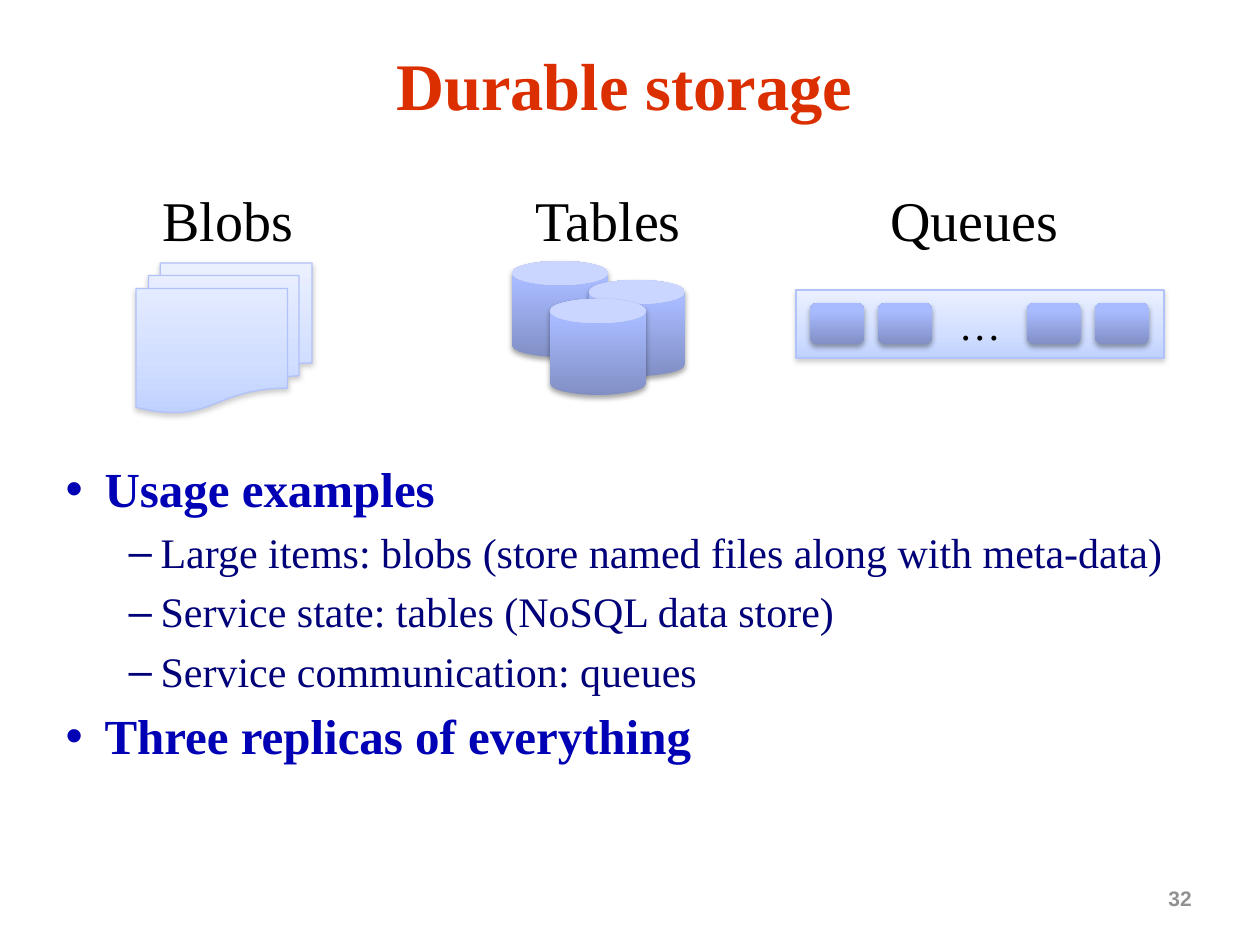
import pptx
import pptx.dml.color
import pptx.enum.shapes
import pptx.enum.text
import pptx.oxml
import pptx.oxml.ns
import pptx.util

RGB = pptx.dml.color.RGBColor
KIND = pptx.enum.shapes.MSO_SHAPE
ALIGN = pptx.enum.text.PP_ALIGN
MID = pptx.enum.text.MSO_ANCHOR.MIDDLE
FIT = pptx.enum.text.MSO_AUTO_SIZE
NS = pptx.oxml.ns.nsdecls("a")

RED = RGB(0xDC, 0x2F, 0x00)
BLUE = RGB(0x00, 0x00, 0xB4)
NAVY = RGB(0x00, 0x00, 0x78)
BLACK = RGB(0x00, 0x00, 0x00)
GRAY = RGB(0x91, 0x91, 0x91)
EDGE = RGB(0xB1, 0xC1, 0xFA)
SHADE = RGB(0x80, 0x80, 0x80)
PALE = [(0, RGB(0xEB, 0xF0, 0xFF)), (65, RGB(0xD1, 0xDE, 0xFF)), (100, RGB(0xBF, 0xD1, 0xFF))]
DEEP = [(0, RGB(0x81, 0x8F, 0xC5)), (80, RGB(0xA8, 0xBB, 0xFF)), (100, RGB(0xAA, 0xBC, 0xFF))]


def px(num):
    return pptx.util.Emu(round(num * 914400 / 126))


def write(para, text, size=32, color=BLACK, bold=False, face="Times New Roman",
          align=None, gap=0, lead=None):
    para.alignment = align
    para.space_before = pptx.util.Pt(gap)
    para.line_spacing = lead
    run = para.add_run()
    run.text = text
    font = run.font
    font.name, font.size, font.bold = face, pptx.util.Pt(size), bold
    font.color.rgb = color


class Deck:
    """Holds the style and the current slide."""

    def __init__(self):
        self.show = pptx.Presentation()
        self.show.slide_width, self.show.slide_height = px(1260), px(945)
        self.slide = self.show.slides.add_slide(self.show.slide_layouts[1])

    def place(self, item, box):
        item.left, item.top, item.width, item.height = map(px, box)
        frame = item.text_frame
        frame.word_wrap = True
        frame.auto_size = FIT.NONE
        return frame

    def title(self, text, box):
        frame = self.place(self.slide.shapes.title, box)
        frame.vertical_anchor = MID
        write(frame.paragraphs[0], text, size=38, color=RED, bold=True,
              align=ALIGN.CENTER, lead=0.9)

    def list(self, rows, box):
        frame = self.place(self.slide.placeholders[1], box)
        looks = [("•", 39, -39, dict(size=28, color=BLUE, bold=True), 9),
                 ("–", 95, -32, dict(size=24, color=NAVY), 8)]
        for pos, (level, text) in enumerate(rows):
            para = frame.add_paragraph() if pos else frame.paragraphs[0]
            mark, left, hang, form, gap = looks[level]
            para.level = level
            props = para._p.get_or_add_pPr()
            props.set("marL", str(px(left)))
            props.set("indent", str(px(hang)))
            props.append(pptx.oxml.parse_xml(f'<a:buChar {NS} char="{mark}"/>'))
            write(para, text, gap=gap if pos else 0, lead=0.9, **form)

    def label(self, text, box, **form):
        item = self.slide.shapes.add_textbox(*map(px, box))
        item.text_frame.word_wrap = False
        write(item.text_frame.paragraphs[0], text, **form)

    def shape(self, kind, box, stops, angle, tint, alpha, drop, edge=None):
        item = self.slide.shapes.add_shape(kind, *map(px, box))
        item.fill.background()
        props = item._element.spPr
        marks = "".join(f'<a:gs pos="{pos * 1000}"><a:srgbClr val="{color}"/></a:gs>'
                        for pos, color in stops)
        props.replace(props.find(pptx.oxml.ns.qn("a:noFill")), pptx.oxml.parse_xml(
            f'<a:gradFill {NS} rotWithShape="1"><a:gsLst>{marks}</a:gsLst>'
            f'<a:lin ang="{angle * 60000}" scaled="0"/></a:gradFill>'))
        if edge is None:
            item.line.fill.background()
        else:
            item.line.color.rgb = edge
            item.line.width = pptx.util.Pt(0.75)
        item.shadow.inherit = False
        props.find(pptx.oxml.ns.qn("a:effectLst")).append(pptx.oxml.parse_xml(
            f'<a:outerShdw {NS} blurRad="{pptx.util.Pt(3.1)}" dist="{pptx.util.Pt(drop)}" '
            f'dir="5400000" rotWithShape="0"><a:srgbClr val="{tint}">'
            f'<a:alpha val="{alpha * 1000}"/></a:srgbClr></a:outerShdw>'))
        return item

    def pale(self, kind, box):
        return self.shape(kind, box, PALE, 90, SHADE, 38, 1.6, EDGE)

    def deep(self, kind, box):
        return self.shape(kind, box, DEEP, 270, BLACK, 35, 1.8)


def main():
    deck = Deck()
    deck.label("32", (1156, 879, 57, 38), size=12, color=GRAY, bold=True, face="Arial")
    deck.title("Durable storage", (31, 42, 1187, 94))
    deck.list([
        (0, "Usage examples"),
        (1, "Large items: blobs (store named files along with meta-data)"),
        (1, "Service state: tables (NoSQL data store)"),
        (1, "Service communication: queues"),
        (0, "Three replicas of everything"),
    ], (53, 459, 1155, 445))
    for text, left, width in [("Blobs", 150, 166), ("Tables", 523, 189), ("Queues", 878, 223)]:
        deck.label(text, (left, 179, width, 81))

    deck.pale(KIND.FLOWCHART_MULTIDOCUMENT, (136, 263, 176, 150))
    for left, top in [(512, 261), (589, 280), (550, 299)]:
        deck.deep(KIND.CAN, (left, top, 96, 96))

    queue = deck.pale(KIND.RECTANGLE, (796, 290, 368, 68))
    queue.text_frame.vertical_anchor = MID
    write(queue.text_frame.paragraphs[0], "…", size=24, align=ALIGN.CENTER)
    for start in (810, 1027):
        for step in range(2):
            deck.deep(KIND.ROUNDED_RECTANGLE, (start + 68 * step, 303, 54, 41))

    deck.show.save("out.pptx")


if __name__ == "__main__":
    main()
